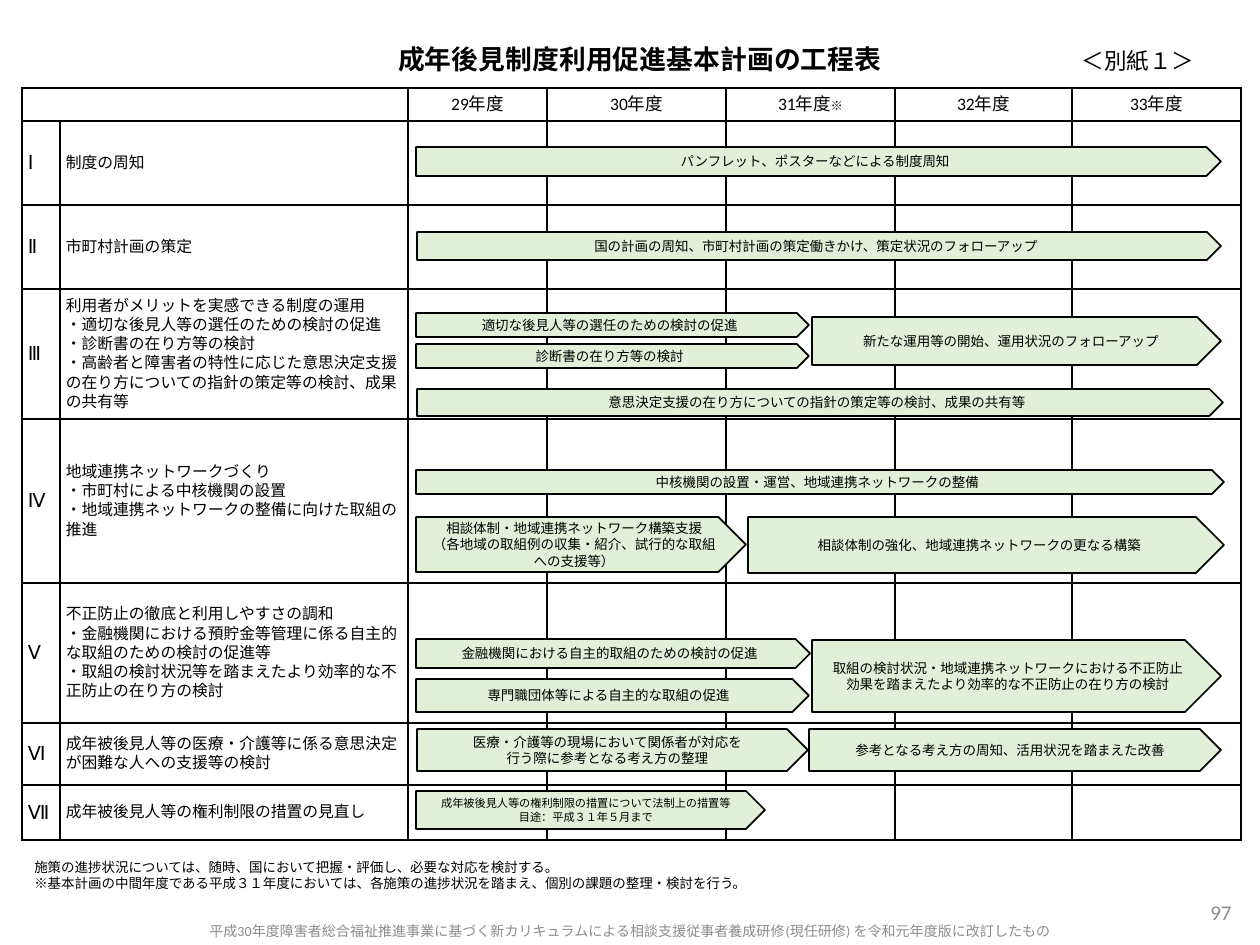
"""Build the schedule slide for the adult guardianship promotion plan."""
from lxml.etree import SubElement
from pptx import Presentation
from pptx.dml.color import RGBColor
from pptx.enum.shapes import MSO_SHAPE
from pptx.enum.text import MSO_ANCHOR, PP_ALIGN
from pptx.oxml.ns import qn
from pptx.util import Pt

PX = 914400 / 126
FONT = "Calibri"
COLORS = {"ink": "000000", "arrow": "E2F0D9", "muted": "8C8C8C"}


def px(n):
    return round(n * PX)


def style(tf, size, color="ink", align=PP_ALIGN.LEFT, anchor=MSO_ANCHOR.MIDDLE):
    tf.word_wrap = True
    tf.vertical_anchor = anchor
    for p in tf.paragraphs:
        p.alignment = align
        for r in p.runs:
            r.font.size = Pt(size)
            r.font.name = FONT
            r.font.color.rgb = RGBColor.from_string(COLORS[color])
            SubElement(r.font._element, qn("a:ea"), typeface=FONT)


prs = Presentation()
prs.slide_width, prs.slide_height = px(1260), px(945)
s = prs.slides.add_slide(prs.slide_layouts[6])

tf = s.shapes.add_textbox(px(22), px(33), px(1203), px(46)).text_frame
tf.margin_left = tf.margin_right = px(8)
tf.margin_top = tf.margin_bottom = px(4)
p = tf.paragraphs[0]
for text in ("\t成年後見制度利用促進基本計画の工程表", "\t＜別紙１＞"):
    p.add_run().text = text
tabs = SubElement(p._p.get_or_add_pPr(), qn("a:tabLst"))
for pos, algn in ((610, "ctr"), (1052, "l")):
    SubElement(tabs, qn("a:tab"), pos=str(px(pos)), algn=algn)
style(tf, 15.3, anchor=MSO_ANCHOR.BOTTOM)
p.runs[0].font.bold = True
p.runs[1].font.size = Pt(12.9)

cols = [38, 348, 139, 179, 169, 177, 169]
rows = [33, 84, 84, 130, 164, 140, 62, 55]
years = ["29年度", "30年度", "31年度", "32年度", "33年度"]
items = [
    ("Ⅰ", "制度の周知"),
    ("Ⅱ", "市町村計画の策定"),
    ("Ⅲ", "利用者がメリットを実感できる制度の運用\n"
          "・適切な後見人等の選任のための検討の促進\n"
          "・診断書の在り方等の検討\n"
          "・高齢者と障害者の特性に応じた意思決定支援の在り方についての指針の策定等の検討、成果の共有等"),
    ("Ⅳ", "地域連携ネットワークづくり\n"
          "・市町村による中核機関の設置\n"
          "・地域連携ネットワークの整備に向けた取組の推進"),
    ("Ⅴ", "不正防止の徹底と利用しやすさの調和\n"
          "・金融機関における預貯金等管理に係る自主的な取組のための検討の促進等\n"
          "・取組の検討状況等を踏まえたより効率的な不正防止の在り方の検討"),
    ("Ⅵ", "成年被後見人等の医療・介護等に係る意思決定が困難な人への支援等の検討"),
    ("Ⅶ", "成年被後見人等の権利制限の措置の見直し"),
]
tbl = s.shapes.add_table(len(rows), len(cols), px(22), px(88), px(sum(cols)), px(sum(rows))).table
tbl.first_row = tbl.horz_banding = False
for i, w in enumerate(cols):
    tbl.columns[i].width = px(w)
for i, h in enumerate(rows):
    tbl.rows[i].height = px(h)
grid = [["", ""] + years] + [list(item) + [""] * 5 for item in items]
for i, row in enumerate(grid):
    for j, text in enumerate(row):
        cell = tbl.cell(i, j)
        inset = px(6) if i else 0
        cell.margin_left = cell.margin_right = cell.margin_top = cell.margin_bottom = inset
        cell.vertical_anchor = MSO_ANCHOR.MIDDLE
        tf = cell.text_frame
        if text:
            tf.text = text
            if text == "31年度":
                tf.paragraphs[0].add_run().text = "※"
            size = 10 if i == 0 else 11 if j == 0 else 9
            style(tf, size, align=PP_ALIGN.LEFT if i else PP_ALIGN.CENTER)
        else:
            SubElement(tf.paragraphs[0]._p, qn("a:endParaRPr"), sz="900")
        tcPr = cell._tc.get_or_add_tcPr()
        for side in ("a:lnL", "a:lnR", "a:lnT", "a:lnB"):
            ln = SubElement(tcPr, qn(side), w=str(Pt(1)))
            SubElement(SubElement(ln, qn("a:solidFill")), qn("a:srgbClr"), val=COLORS["ink"])
        cell.fill.background()
tbl.cell(0, 4).text_frame.paragraphs[0].runs[1].font.size = Pt(7)
tbl.cell(0, 0).merge(tbl.cell(0, 1))

arrows = [
    (416, 147, 805, 29, 7.7, "パンフレット、ポスターなどによる制度周知"),
    (417, 232, 804, 28, 7.7, "国の計画の周知、市町村計画の策定働きかけ、策定状況のフォローアップ"),
    (416, 470, 808, 24, 7.7, "中核機関の設置・運営、地域連携ネットワークの整備"),
    (416, 517, 330, 55, 7.7, "相談体制・地域連携ネットワーク構築支援\n"
                             "（各地域の取組例の収集・紹介、試行的な取組への支援等）"),
    (748, 517, 476, 56, 7.7, "相談体制の強化、地域連携ネットワークの更なる構築"),
    (416, 313, 393, 24, 7.7, "適切な後見人等の選任のための検討の促進"),
    (416, 344, 393, 24, 7.7, "診断書の在り方等の検討"),
    (417, 389, 806, 27, 7.7, "意思決定支援の在り方についての指針の策定等の検討、成果の共有等"),
    (812, 317, 409, 48, 7.7, "新たな運用等の開始、運用状況のフォローアップ"),
    (416, 639, 394, 29, 7.7, "金融機関における自主的取組のための検討の促進"),
    (812, 640, 409, 72, 7.7, "取組の検討状況・地域連携ネットワークにおける不正防止\n"
                             "効果を踏まえたより効率的な不正防止の在り方の検討"),
    (417, 729, 391, 42, 7.7, "医療・介護等の現場において関係者が対応を\n行う際に参考となる考え方の整理"),
    (416, 791, 349, 38, 6.4, "成年被後見人等の権利制限の措置について法制上の措置等\n目途：平成３１年５月まで"),
    (416, 679, 393, 33, 7.7, "専門職団体等による自主的な取組の促進"),
    (809, 729, 412, 42, 7.7, "参考となる考え方の周知、活用状況を踏まえた改善"),
]
for x, y, w, h, size, text in arrows:
    sp = s.shapes.add_shape(MSO_SHAPE.PENTAGON, px(x), px(y), px(w), px(h))
    sp.shadow.inherit = False
    sp.fill.solid()
    sp.fill.fore_color.rgb = RGBColor.from_string(COLORS["arrow"])
    sp.line.color.rgb = RGBColor.from_string(COLORS["ink"])
    sp.line.width = Pt(1)
    sp.text_frame.text = text
    style(sp.text_frame, size, align=PP_ALIGN.CENTER)

notes = [
    (22, 853, 895, 45, 7.7, "ink", PP_ALIGN.LEFT, MSO_ANCHOR.TOP,
     "施策の進捗状況については、随時、国において把握・評価し、必要な対応を検討する。\n"
     "※基本計画の中間年度である平成３１年度においては、各施策の進捗状況を踏まえ、個別の課題の整理・検討を行う。"),
    (960, 887, 284, 50, 12, "muted", PP_ALIGN.RIGHT, MSO_ANCHOR.MIDDLE, "97"),
    (0, 919, 1260, 23, 8, "muted", PP_ALIGN.CENTER, MSO_ANCHOR.MIDDLE,
     "平成30年度障害者総合福祉推進事業に基づく新カリキュラムによる相談支援従事者養成研修(現任研修) を令和元年度版に改訂したもの"),
]
for x, y, w, h, size, color, align, anchor, text in notes:
    tf = s.shapes.add_textbox(px(x), px(y), px(w), px(h)).text_frame
    tf.text = text
    style(tf, size, color, align, anchor)

prs.save("out.pptx")
